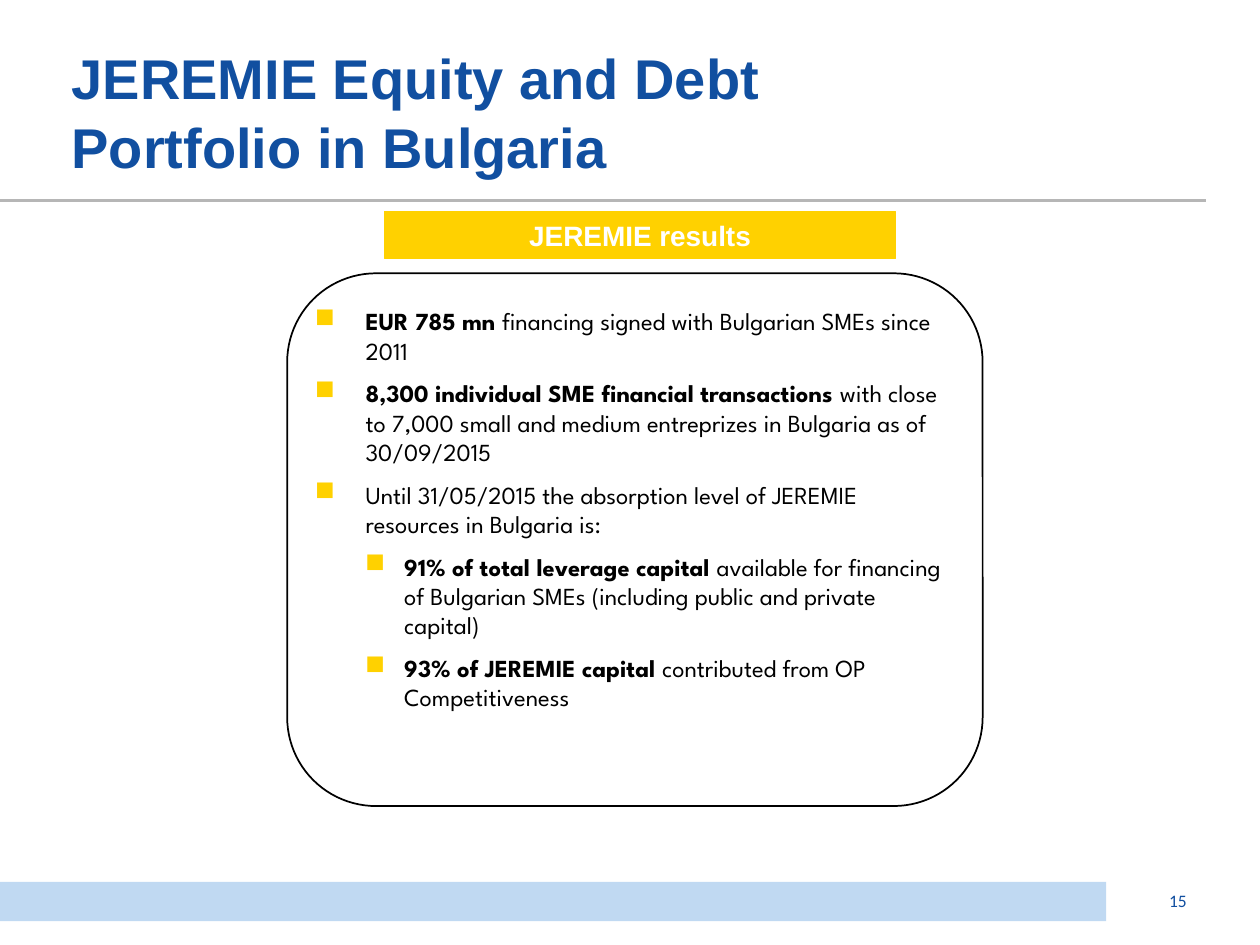
from dataclasses import dataclass

from lxml import etree
from pptx import Presentation
from pptx.dml.color import RGBColor
from pptx.enum import shapes, text
from pptx.oxml import ns
from pptx.util import Cm, Pt

COLORS = {
    "blue": "114FA0",
    "pale_blue": "C0D9F2",
    "grey": "B6B6B6",
    "yellow": "FFD100",
    "white": "FFFFFF",
    "black": "000000",
}


@dataclass
class Box:
    """Position and size in centimetres."""
    left: float
    top: float
    width: float
    height: float

    def lengths(self) -> tuple:
        return Cm(self.left), Cm(self.top), Cm(self.width), Cm(self.height)


@dataclass
class Result:
    key_fact: str
    detail: str
    level: int = 0


RESULTS = [
    Result("EUR 785 mn ", "financing signed with Bulgarian SMEs since 2011"),
    Result("8,300 individual SME financial transactions ",
           "with close to 7,000 small and medium entreprizes in Bulgaria as of 30/09/2015"),
    Result("", "Until 31/05/2015 the absorption level of JEREMIE resources in Bulgaria is:"),
    Result("91% of total leverage capital ",
           "available for financing of Bulgarian SMEs (including public and private capital)", 1),
    Result("93% of JEREMIE capital ", "contributed from OP Competitiveness", 1),
]
INDENTS = [(1.02, 1.02), (1.8, 0.79)]  # left margin and hanging indent by level, cm


def color(name: str) -> RGBColor:
    return RGBColor.from_string(COLORS[name])


def style(paragraph, font_name: str, size: float, color_name: str, bold=None) -> None:
    font = paragraph.font
    font.name, font.size, font.bold = font_name, Pt(size), bold
    font.color.rgb = color(color_name)


def add_panel(slide, kind, box: Box, fill: str, line: str = "", line_width: float = 1):
    panel = slide.shapes.add_shape(kind, *box.lengths())
    panel.shadow.inherit = False
    panel.fill.solid()
    panel.fill.fore_color.rgb = color(fill)
    if line:
        panel.line.color.rgb = color(line)
        panel.line.width = Pt(line_width)
    else:
        panel.line.fill.background()
    return panel


def add_rule(slide, y: float, end: float) -> None:
    rule = slide.shapes.add_connector(
        shapes.MSO_CONNECTOR.STRAIGHT, 0, Cm(y), Cm(end), Cm(y))
    rule.line.color.rgb = color("grey")
    rule.line.width = Pt(1.5)
    etree.SubElement(rule._element.spPr, ns.qn("a:effectLst"))


def add_text_frame(slide, box: Box):
    frame = slide.shapes.add_textbox(*box.lengths()).text_frame
    frame.word_wrap = True
    return frame


def set_bullet(paragraph, level: int) -> None:
    margin, hanging = INDENTS[level]
    properties = paragraph._p.get_or_add_pPr()
    properties.set("marL", str(Cm(margin)))
    properties.set("indent", str(-Cm(hanging)))
    bullet_color = etree.SubElement(properties, ns.qn("a:buClr"))
    etree.SubElement(bullet_color, ns.qn("a:srgbClr"), val=COLORS["yellow"])
    etree.SubElement(properties, ns.qn("a:buSzPct"), val="110000")
    etree.SubElement(properties, ns.qn("a:buChar"), char="■")


def add_results(frame, results: list[Result]) -> None:
    for index, result in enumerate(results):
        paragraph = frame.add_paragraph() if index else frame.paragraphs[0]
        paragraph.level = result.level
        paragraph.space_after = Pt(7.5)
        set_bullet(paragraph, result.level)
        style(paragraph, "League Spartan", 14, "black")
        for words, bold in ((result.key_fact, True), (result.detail, False)):
            if words:
                run = paragraph.add_run()
                run.text = words
                run.font.bold = bold


def main() -> None:
    deck = Presentation()
    deck.slide_width, deck.slide_height = Cm(25.4), Cm(19.05)
    slide = deck.slides.add_slide(deck.slide_layouts[5])
    rectangle = shapes.MSO_SHAPE.RECTANGLE

    # Footer band and rule under the title
    add_panel(slide, rectangle, Box(0, 17.78, 22.3, 0.79), "pale_blue")
    add_rule(slide, 4.04, 24.31)

    # Title
    title = slide.shapes.title
    title.left, title.top, title.width, title.height = Box(1.19, 0.76, 18.01, 3).lengths()
    title.text_frame.text = "JEREMIE Equity and Debt Portfolio in Bulgaria"
    title.text_frame.vertical_anchor = text.MSO_ANCHOR.BOTTOM
    heading = title.text_frame.paragraphs[0]
    heading.alignment = text.PP_ALIGN.LEFT
    heading.line_spacing = 1.04
    style(heading, "Arial", 32, "blue", True)

    # Page number
    page = add_text_frame(slide, Box(23.06, 17.65, 1.37, 1.02))
    page.vertical_anchor = text.MSO_ANCHOR.MIDDLE
    page.text = "15"
    page.paragraphs[0].alignment = text.PP_ALIGN.CENTER
    style(page.paragraphs[0], "Calibri", 10, "blue")

    # Results frame and its banner
    add_panel(slide, shapes.MSO_SHAPE.ROUNDED_RECTANGLE,
              Box(5.79, 5.51, 14.02, 10.74), "white", "black")
    banner = add_panel(slide, rectangle, Box(7.75, 4.27, 10.31, 0.94),
                       "yellow", "yellow", 0.75).text_frame
    banner.text = "JEREMIE results"
    banner.paragraphs[0].alignment = text.PP_ALIGN.CENTER
    style(banner.paragraphs[0], "Arial", 16, "white", True)

    # Results list
    add_results(add_text_frame(slide, Box(6.1, 6.05, 13.41, 8.64)), RESULTS)

    deck.save("out.pptx")


if __name__ == "__main__":
    main()
